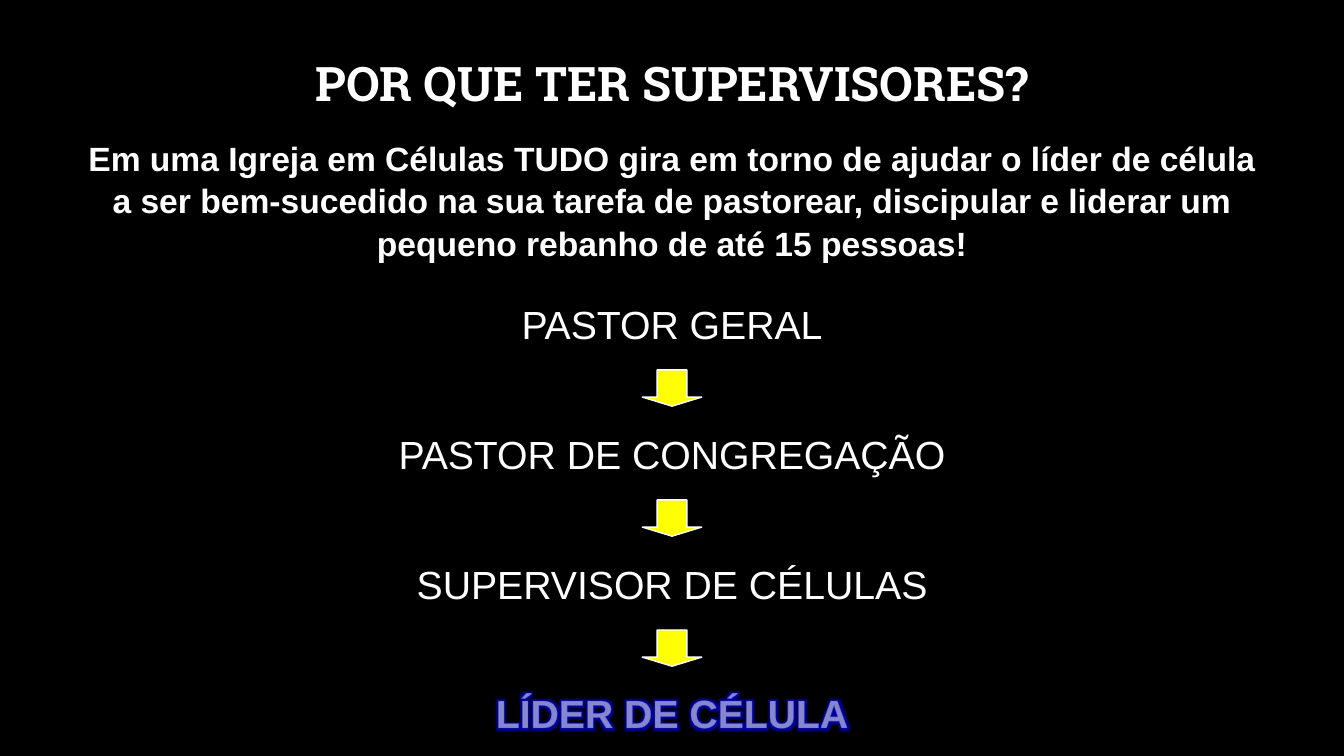
from lxml import etree
from pptx import Presentation
from pptx.dml.color import RGBColor
from pptx.enum.shapes import MSO_SHAPE
from pptx.enum.text import MSO_ANCHOR, MSO_AUTO_SIZE, PP_ALIGN
from pptx.oxml import parse_xml
from pptx.oxml.ns import nsdecls, qn
from pptx.util import Inches, Pt

BLACK = RGBColor(0x00, 0x00, 0x00)
WHITE = RGBColor(0xFF, 0xFF, 0xFF)
YELLOW = RGBColor(0xFF, 0xFF, 0x00)
LILAC = RGBColor(0x8E, 0x8E, 0xFD)
BLUE = RGBColor(0x00, 0x00, 0xFF)

SLIDE_WIDTH = 13.33
LEVEL_TOP = 2.92
ARROW_TOP = 3.67
LEVEL_STEP = 1.29
LEVELS = [
    ("PASTOR GERAL", 3.29),
    ("PASTOR DE CONGREGAÇÃO", 5.73),
    ("SUPERVISOR DE CÉLULAS", 5.32),
]


class SlideBuilder:
    body_font = "Arial"
    title_font = "Roboto Slab"

    def __init__(self, presentation):
        self.slide = presentation.slides.add_slide(presentation.slide_layouts[6])
        fill = self.slide.background.fill
        fill.solid()
        fill.fore_color.rgb = BLACK

    def centered_text(self, text, top, width, height, size, bold=False,
                      font_name=body_font, line_spacing=1.05,
                      anchor=MSO_ANCHOR.MIDDLE, wrap=False):
        left = (SLIDE_WIDTH - width) / 2
        shape = self.slide.shapes.add_textbox(
            Inches(left), Inches(top), Inches(width), Inches(height))
        frame = shape.text_frame
        frame.word_wrap = wrap
        frame.auto_size = MSO_AUTO_SIZE.SHAPE_TO_FIT_TEXT
        frame.vertical_anchor = anchor
        paragraph = frame.paragraphs[0]
        paragraph.alignment = PP_ALIGN.CENTER
        paragraph.line_spacing = line_spacing
        run = paragraph.add_run()
        run.text = text
        run.font.name = font_name
        run.font.size = Pt(size)
        run.font.bold = bold
        run.font.color.rgb = WHITE
        return run

    def level(self, text, top, width, bold=False):
        return self.centered_text(text, top, width, 0.57, 28, bold)

    def highlight(self, run):
        properties = run.font.fill._xPr
        outline = parse_xml(
            f'<a:ln {nsdecls("a")}><a:solidFill><a:srgbClr val="{LILAC}">'
            '<a:alpha val="52000"/></a:srgbClr></a:solidFill></a:ln>')
        properties.insert(0, outline)
        effects = etree.Element(qn("a:effectLst"))
        glow = etree.SubElement(effects, qn("a:glow"), rad=str(Pt(8)))
        color = etree.SubElement(glow, qn("a:srgbClr"), val=str(BLUE))
        etree.SubElement(color, qn("a:alpha"), val="60000")
        properties.find(qn("a:solidFill")).addnext(effects)

    def down_arrow(self, top, width=0.59, height=0.36):
        shape = self.slide.shapes.add_shape(
            MSO_SHAPE.DOWN_ARROW, Inches((SLIDE_WIDTH - width) / 2),
            Inches(top), Inches(width), Inches(height))
        shape.shadow.inherit = False
        shape.adjustments[0] = 0.5
        shape.adjustments[1] = 0.25
        shape.fill.solid()
        shape.fill.fore_color.rgb = YELLOW
        shape.line.color.rgb = WHITE
        shape.line.width = Pt(1)


def main():
    presentation = Presentation()
    presentation.slide_width = Inches(SLIDE_WIDTH)
    presentation.slide_height = Inches(7.5)
    builder = SlideBuilder(presentation)

    builder.centered_text(
        "POR QUE TER SUPERVISORES?", 0.54, 11.81, 0.62, 34, bold=True,
        font_name=builder.title_font, line_spacing=0.9, wrap=True)
    builder.centered_text(
        "Em uma Igreja em Células TUDO gira em torno de ajudar o líder de célula "
        "a ser bem-sucedido na sua tarefa de pastorear, discipular e liderar um "
        "pequeno rebanho de até 15 pessoas!",
        1.3, 11.81, 1.31, 24, bold=True, anchor=MSO_ANCHOR.TOP, wrap=True)

    for index, (text, width) in enumerate(LEVELS):
        offset = index * LEVEL_STEP
        builder.level(text, LEVEL_TOP + offset, width)
        builder.down_arrow(ARROW_TOP + offset)

    leader = builder.level("LÍDER DE CÉLULA", 6.77, 3.7, bold=True)
    builder.highlight(leader)

    presentation.save("out.pptx")


if __name__ == "__main__":
    main()
